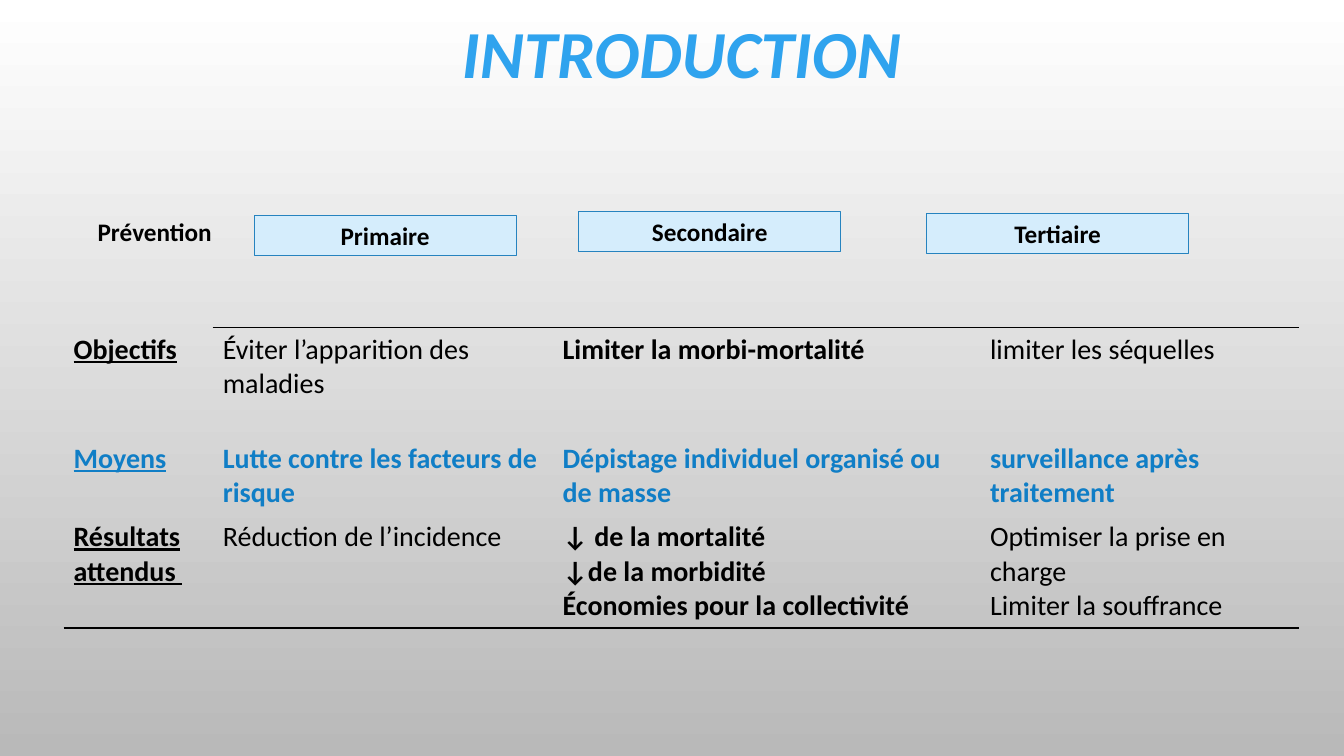
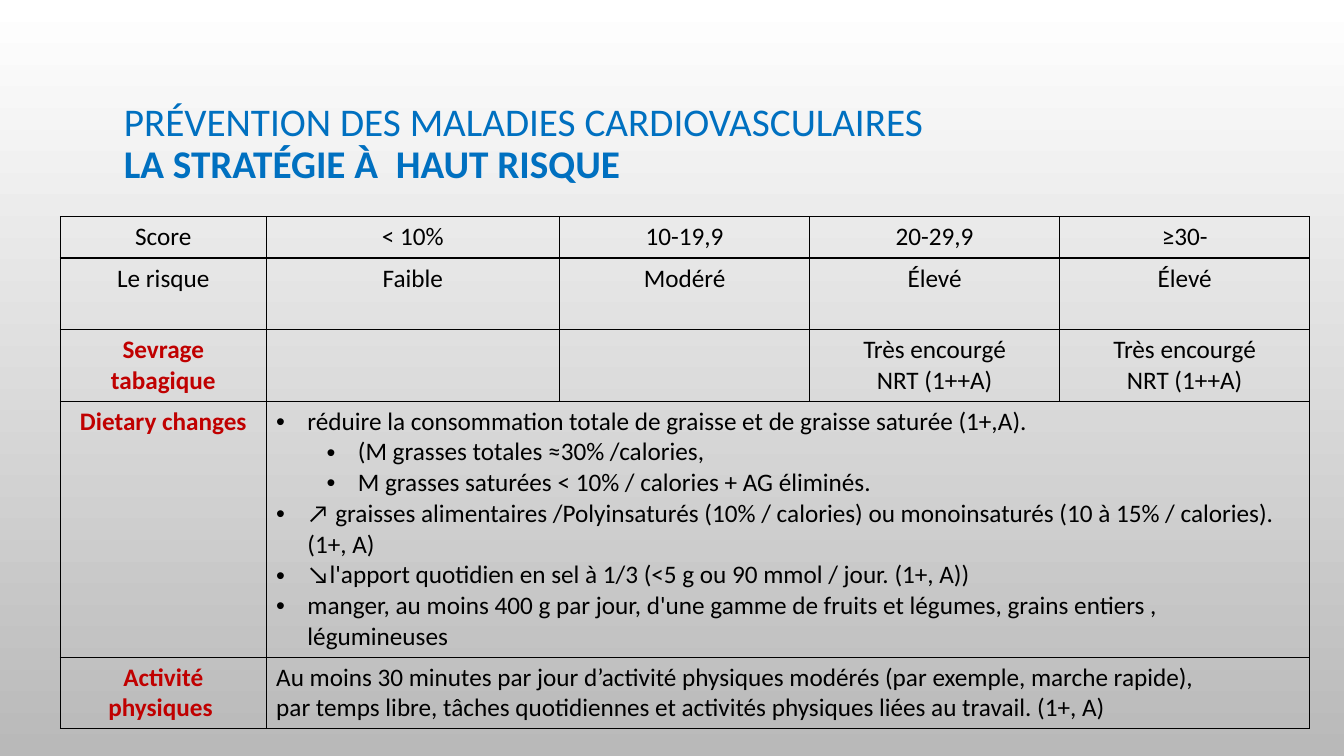
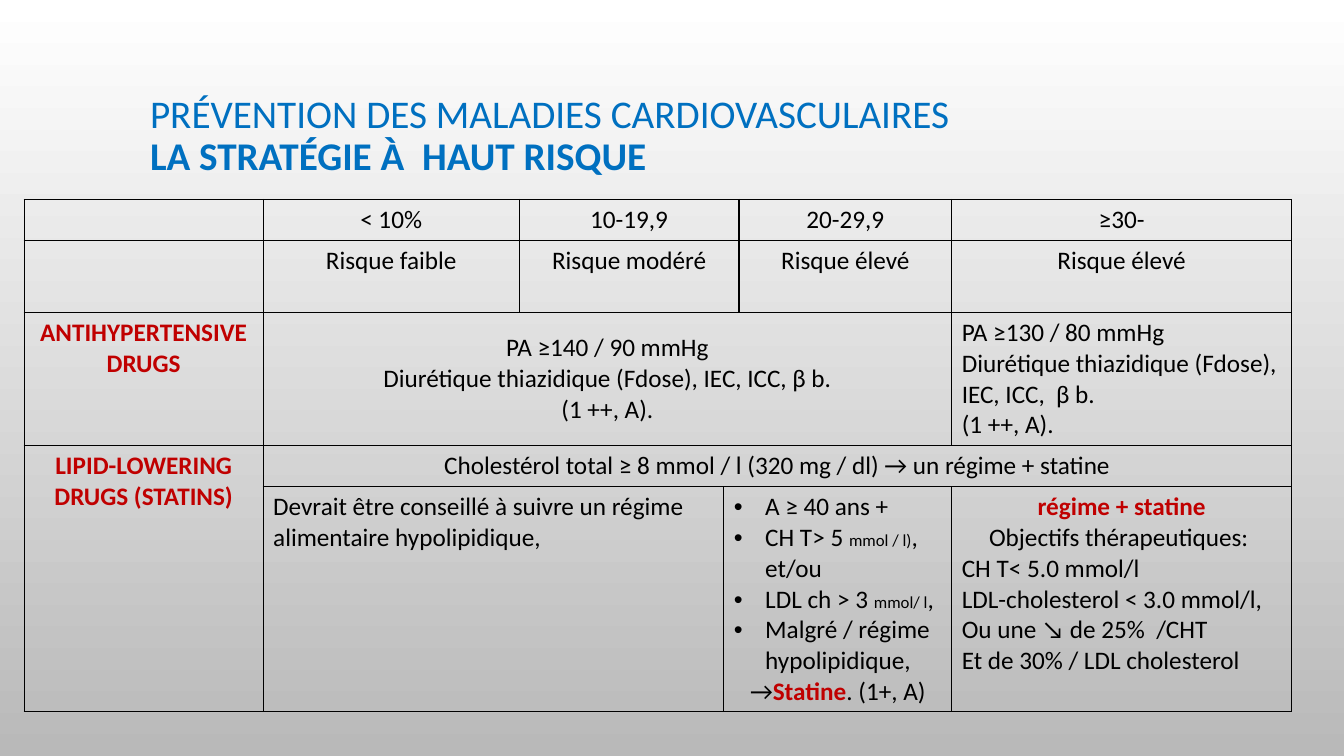
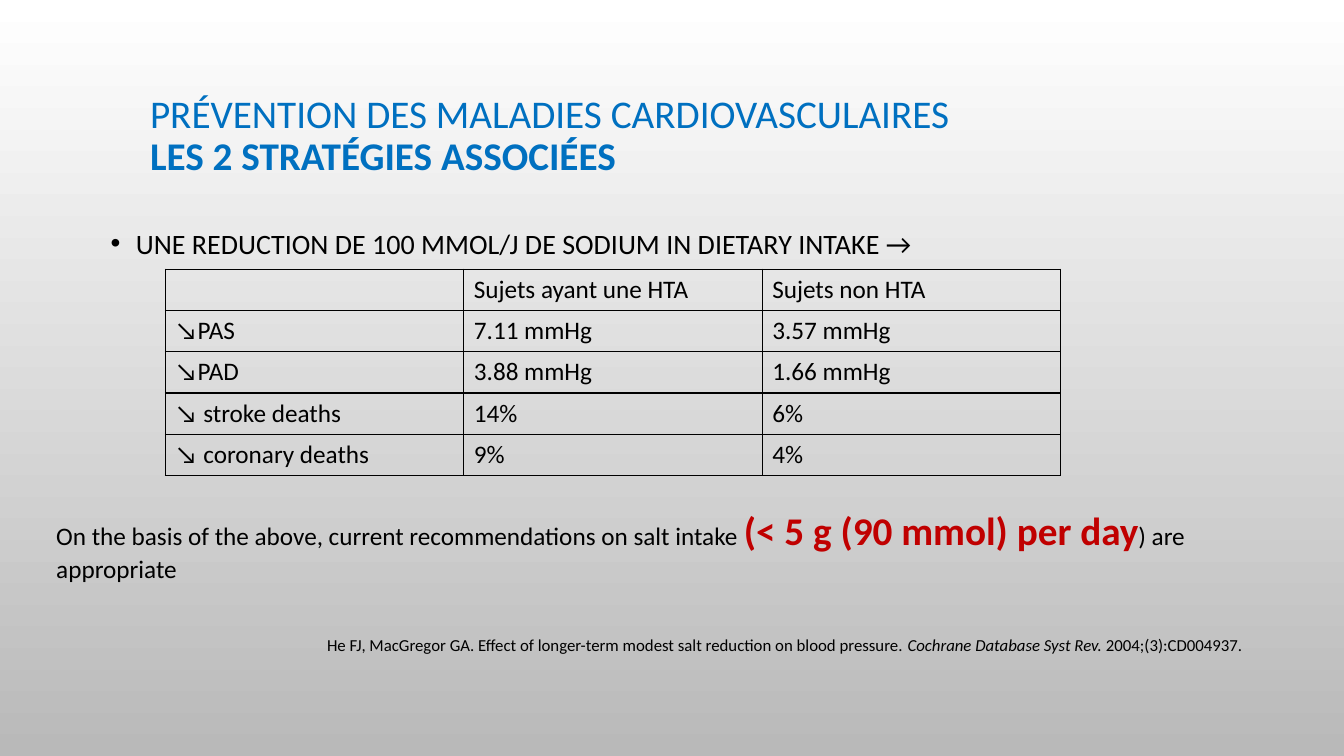
from dataclasses import dataclass

from lxml.etree import SubElement
from pptx import Presentation
from pptx.dml.color import RGBColor
from pptx.enum.shapes import MSO_SHAPE
from pptx.enum.text import MSO_ANCHOR, PP_ALIGN
from pptx.oxml.ns import qn
from pptx.util import Inches, Pt

# Shared look
FONT = "Calibri"
BLACK, RED, BLUE = "000000", "C00000", "107EC6"
TITLE_BLUE, INTRO_BLUE = "0070C0", "2FA3EE"
BOX_FILL, BOX_LINE = "D5EDFC", "2683BF"
CENTER, RIGHT = PP_ALIGN.CENTER, PP_ALIGN.RIGHT
MIDDLE = MSO_ANCHOR.MIDDLE
PLAIN_TABLE = "{2D5ABB26-0587-4C30-8999-92F81FD0307C}"
ALL_SIDES = "LRTB"


@dataclass
class Para:
    """Runs are strings or (string, format) pairs."""
    runs: tuple
    format: dict


def para(*runs, **format):
    return Para(runs, format)


def bullet(*runs, level=0):
    return para(*runs, level=level, bulleted=True, align=PP_ALIGN.LEFT)


def rgb(color):
    return RGBColor.from_string(color)


# Text
def add_run(paragraph, text, size=18, color=BLACK, bold=False, italic=False,
            underline=False):
    run = paragraph.add_run()
    run.text = text.rstrip("\n")
    font = run.font
    font.name, font.size, font.color.rgb = FONT, Pt(size), rgb(color)
    font.bold, font.italic, font.underline = bold, italic, underline
    if text.endswith("\n"):
        paragraph.add_line_break()


def set_bullet(paragraph, level, indent):
    properties = paragraph._p.get_or_add_pPr()
    properties.set("marL", str(Inches(indent + 0.5 * level)))
    properties.set("indent", str(-Inches(indent)))
    SubElement(properties, qn("a:buFont"), typeface="Arial")
    SubElement(properties, qn("a:buChar"), char="•")


def write(frame, text, **format):
    """Fill a frame with one paragraph or a list; inner formats win."""
    for index, item in enumerate(text if isinstance(text, list) else [text]):
        item = item if isinstance(item, Para) else para(item)
        style = {**format, **item.format}
        paragraph = frame.add_paragraph() if index else frame.paragraphs[0]
        paragraph.alignment = style.pop("align", None)
        paragraph.level = level = style.pop("level", 0)
        spacing = style.pop("spacing", None)
        indent = style.pop("indent", 0.31)
        if style.pop("bulleted", False):
            set_bullet(paragraph, level, indent)
        if spacing:
            paragraph.line_spacing = spacing
        for run in item.runs:
            words, own = (run, {}) if isinstance(run, str) else run
            add_run(paragraph, words, **{**style, **own})


def add_text(shapes, text, left, top, width, height, anchor=MSO_ANCHOR.TOP,
             wrap=True, **format):
    frame = shapes.add_textbox(*map(Inches, (left, top, width, height))).text_frame
    frame.word_wrap, frame.vertical_anchor = wrap, anchor
    write(frame, text, **format)


def add_title(slide, strategy, left=1.39, top=0.48):
    heading = para("PRÉVENTION DES MALADIES CARDIOVASCULAIRES\n",
                   (strategy, {"bold": True}))
    add_text(slide.shapes, heading, left, top, 11.33, 1.75, anchor=MIDDLE,
             size=28, color=TITLE_BLUE, spacing=0.9)


# Shapes and tables
def add_box(shapes, text, left, top):
    box = shapes.add_shape(MSO_SHAPE.RECTANGLE,
                           *map(Inches, (left, top, 2.6, 0.4)))
    box.shadow.inherit = False
    box.fill.solid()
    box.fill.fore_color.rgb = rgb(BOX_FILL)
    box.line.color.rgb, box.line.width = rgb(BOX_LINE), Pt(0.75)
    write(box.text_frame, text, bold=True, align=CENTER)


def set_borders(cell, sides):
    properties = cell._tc.get_or_add_tcPr()
    for side in sides:
        line = SubElement(properties, qn(f"a:ln{side}"), w=str(Pt(1)))
        fill = SubElement(line, qn("a:solidFill"))
        SubElement(fill, qn("a:srgbClr"), val=BLACK)


def add_grid(slide, left, top, widths, heights, content, merges=(),
             borders=lambda row, column: ALL_SIDES, **format):
    """Draw a table; merges are (first row, first column, last row, last column)."""
    table = slide.shapes.add_table(
        len(heights), len(widths), Inches(left), Inches(top),
        Inches(sum(widths)), Inches(sum(heights))).table
    table.first_row = table.horz_banding = False
    table._tbl.tblPr.find(qn("a:tableStyleId")).text = PLAIN_TABLE
    for column, width in zip(table.columns, widths):
        column.width = Inches(width)
    for row, height in zip(table.rows, heights):
        row.height = Inches(height)
    for r, row in enumerate(content):
        for c, text in enumerate(row):
            cell = table.cell(r, c)
            set_borders(cell, borders(r, c))
            cell.fill.background()
            if text:
                write(cell.text_frame, text, **format)
    for r1, c1, r2, c2 in merges:
        table.cell(r1, c1).merge(table.cell(r2, c2))
    return table


def red(text):
    return para(text, color=RED, bold=True)


def left(*runs):
    return para(*runs, align=PP_ALIGN.LEFT)


# Slides
def introduction(slide):
    add_text(slide.shapes, "INTRODUCTION", 1.01, 0.29, 11.5, 0.54, anchor=MIDDLE,
             size=48, color=INTRO_BLUE, bold=True, italic=True, align=CENTER,
             spacing=0.9)

    levels = slide.shapes.add_group_shape().shapes
    for name, x, y in (("Primaire", 2.52, 2.14), ("Secondaire", 5.74, 2.1),
                       ("Tertiaire", 9.19, 2.12)):
        add_box(levels, name, x, y)
    add_text(levels, "Prévention", 0.87, 2.1, 1.34, 0.4, wrap=False, bold=True)

    def heading(text, color=BLACK):
        return para(text, bold=True, underline=True, color=color)

    def strong(text, color=BLACK):
        return para(text, bold=True, color=color)

    def rules(row, column):
        return "T" if row == 0 and column else "B" if row == 2 else ""

    add_grid(slide, 0.63, 3.25, [1.48, 3.37, 4.24, 3.16], [1.08, 0.78, 1.12], [
        [heading("Objectifs"), "Éviter l’apparition des maladies",
         strong("Limiter la morbi-mortalité"), "limiter les séquelles"],
        [heading("Moyens", BLUE),
         strong("Lutte contre les facteurs de risque", BLUE),
         strong("Dépistage individuel organisé ou de masse", BLUE),
         strong("surveillance après traitement", BLUE)],
        [heading("Résultats attendus "), "Réduction de l’incidence",
         [strong("↓ de la mortalité"), strong("↓de la morbidité"),
          strong("Économies pour la collectivité")],
         ["Optimiser la prise en charge", "Limiter la souffrance"]],
    ], borders=rules, size=20)


def lifestyle(slide):
    quitting = ["Très encourgé", "NRT (1++A)"]
    diet = [
        bullet("réduire la consommation totale de graisse et de graisse "
               "saturée (1+,A)."),
        bullet("(M grasses totales ≈30% /calories,", level=1),
        bullet("M grasses saturées < 10% / calories + AG éliminés.", level=1),
        bullet("↗ graisses alimentaires /Polyinsaturés (10% / calories) ou "
               "monoinsaturés (10 à 15% / calories). (1+, A)"),
        bullet("↘l'apport quotidien en sel à 1/3 (<5 g ou 90 mmol / jour. (1+, A))"),
        bullet("manger, au moins 400 g par jour, d'une gamme de fruits et "
               "légumes, grains entiers , légumineuses"),
    ]
    activity = [
        left("Au moins 30 minutes par jour d’activité physiques modérés "
             "(par exemple, marche rapide),"),
        left("par temps libre, tâches quotidiennes et activités physiques "
             "liées au travail. (1+, A)"),
    ]
    add_grid(slide, 0.6, 2.15, [2.04, 2.91, 2.48, 2.48, 2.48],
             [0.41, 0.71, 0.71, 2.54, 0.71], [
        ["Score", "< 10%", "10-19,9", "20-29,9", "≥30-"],
        ["Le risque", "Faible", "Modéré", "Élevé", "Élevé"],
        [red("Sevrage tabagique"), None, None, quitting, quitting],
        [red("Dietary changes"), diet, None, None, None],
        [red("Activité physiques "), activity, None, None, None],
    ], merges=[(3, 1, 3, 4), (4, 1, 4, 4)], align=CENTER)
    add_title(slide, "LA STRATÉGIE À  HAUT RISQUE", 1.13, 0.56)


def drugs(slide):
    small = {"size": 12}
    pressure = ["PA ≥140 / 90 mmHg",
                "Diurétique thiazidique (Fdose), IEC, ICC, β b.", "(1 ++, A)."]
    high_pressure = [left("PA ≥130 / 80 mmHg"),
                     left("Diurétique thiazidique (Fdose), IEC, ICC,  β b."),
                     left("(1 ++, A).")]
    statin = [
        bullet("A ≥ 40 ans +"),
        bullet("CH T> 5 ", ("mmol / l)", small), ", et/ou"),
        bullet("LDL ch > 3 ", ("mmol/ l", small), ","),
        bullet("Malgré / régime hypolipidique,"),
        para("→", ("Statine", {"color": RED, "bold": True}), ". (1+, A)"),
    ]
    goals = [red("régime + statine"), "Objectifs thérapeutiques: ",
             left("CH T< 5.0 mmol/l"), left("LDL-cholesterol < 3.0 mmol/l,"),
             left("Ou une ↘ de 25%  /CHT"), left("Et de 30% / LDL cholesterol")]
    table = add_grid(slide, 0.24, 1.98, [2.37, 2.54, 2.03, 0.15, 2.11, 3.37],
                     [0.41, 0.71, 1.32, 0.41, 2.23], [
        [None, "< 10%", "10-19,9", None, "20-29,9", "≥30-"],
        [None, "Risque faible", "Risque modéré", None, "Risque élevé",
         "Risque élevé"],
        [red("ANTIHYPERTENSIVE DRUGS"), pressure, None, None, None, high_pressure],
        [red("LIPID-LOWERING DRUGS (STATINS)"),
         "Cholestérol total ≥ 8 mmol / l (320 mg / dl) → un régime + statine",
         None, None, None, None],
        [None, left("Devrait être conseillé à suivre un régime alimentaire "
                    "hypolipidique,"), None, statin, None, goals],
    ], merges=[(0, 2, 0, 3), (1, 2, 1, 3), (2, 1, 2, 4), (3, 0, 4, 0),
               (3, 1, 3, 5), (4, 1, 4, 2), (4, 3, 4, 4)], align=CENTER)
    table.cell(2, 1).vertical_anchor = MIDDLE
    add_title(slide, "LA STRATÉGIE À  HAUT RISQUE")


def salt(slide):
    shapes = slide.shapes
    add_text(shapes, "UNE REDUCTION DE 100 MMOL/J DE SODIUM IN DIETARY INTAKE →",
             1, 2.13, 11.33, 3.74, size=20, spacing=1.2, bulleted=True, indent=0.25)
    add_grid(slide, 1.64, 2.67, [2.96] * 3, [0.41] * 5, [
        [None, "Sujets ayant une HTA", "Sujets non HTA"],
        ["↘PAS", "7.11 mmHg", "3.57 mmHg"],
        ["↘PAD", "3.88 mmHg", "1.66 mmHg"],
        ["↘ stroke deaths", "14%", "6%"],
        ["↘ coronary deaths", "9%", "4%"],
    ])
    reference = para(
        "He FJ, MacGregor GA. Effect of longer-term modest salt reduction on "
        "blood pressure. ",
        ("Cochrane Database Syst Rev. ", {"italic": True}),
        "2004;(3):CD004937.")
    add_text(shapes, reference, 2.45, 6.25, 9.97, 0.5, size=12, align=RIGHT)
    advice = para(
        "On the basis of the above, current recommendations on salt intake ",
        ("(< 5 g (90 mmol) per day", {"size": 28, "color": RED, "bold": True}),
        ") are appropriate")
    add_text(shapes, advice, 0.46, 4.97, 12.46, 0.88)
    add_title(slide, "LES 2 STRATÉGIES ASSOCIÉES")


def set_background(master):
    fill = master.background.fill
    fill.gradient()
    fill.gradient_angle = 270
    for stop, color in zip(fill.gradient_stops, ("FFFFFF", "B9B9B9")):
        stop.color.rgb = rgb(color)


def main():
    deck = Presentation()
    deck.slide_width, deck.slide_height = Inches(13.33), Inches(7.5)
    set_background(deck.slide_master)
    for build in (introduction, lifestyle, drugs, salt):
        build(deck.slides.add_slide(deck.slide_layouts[6]))
    deck.save("out.pptx")


if __name__ == "__main__":
    main()
